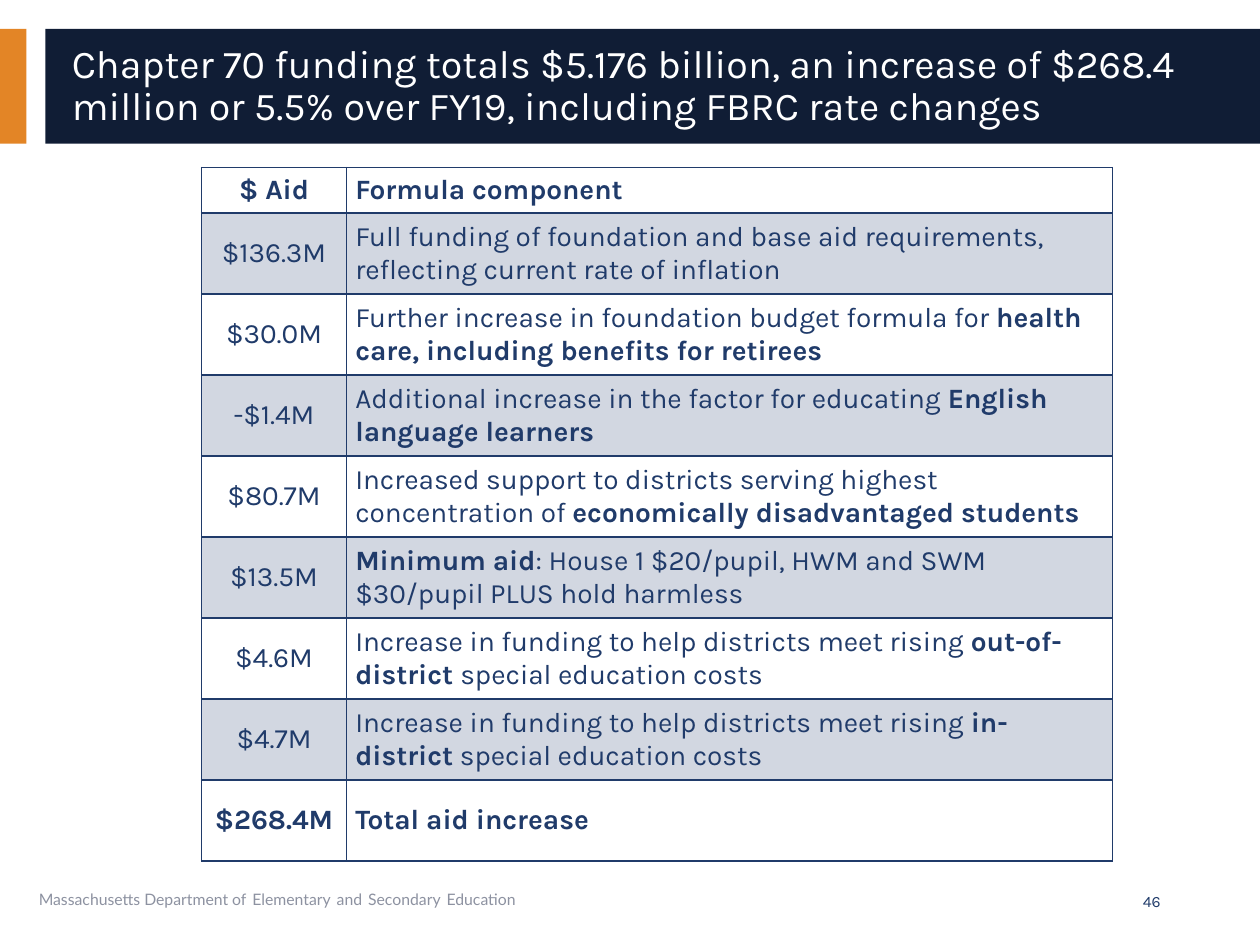
from dataclasses import dataclass

from lxml.etree import SubElement
from pptx import Presentation
from pptx.dml.color import RGBColor
from pptx.enum.shapes import MSO_SHAPE
from pptx.enum.text import MSO_ANCHOR, MSO_AUTO_SIZE, PP_ALIGN
from pptx.oxml.ns import qn
from pptx.util import Inches, Pt


@dataclass(frozen=True)
class Theme:
    """Colours, fonts and type sizes of the slide."""
    navy: str = "101D35"
    blue: str = "203B6A"
    orange: str = "E38526"
    grey: str = "8D92A1"
    white: str = "FFFFFF"
    font: str = "Karla"
    footer_font: str = "Lato"
    title_size: float = 22.5
    table_size: float = 16
    small_size: float = 9
    gap_size: float = 13.5
    band_alpha: int = 20
    border: float = 1


T = Theme()
COLS, ROWS = 100, 75
SLIDE_W, SLIDE_H = Inches(10), Inches(7.5)
BAND_TOP, BAND_ROWS = 2.3, 9.1
FOOTER = "Massachusetts Department of|Elementary|and|Secondary|Education"
AID_ROWS = [
    ("**$ Aid**", "**Formula component**"),
    ("$136.3M", "Full funding of foundation and base aid requirements, "
                "reflecting current rate of inflation"),
    ("$30.0M", "Further increase in foundation budget formula for "
               "**health care, including benefits for retirees**"),
    ("-$1.4M", "Additional increase in the factor for educating "
               "**English language learners**"),
    ("$80.7M", "Increased support to districts serving highest concentration of "
               "**economically disadvantaged students**"),
    ("$13.5M", "**Minimum aid**: House 1 $20/pupil, HWM and SWM "
               "$30/pupil PLUS hold harmless"),
    ("$4.6M", "Increase in funding to help districts meet rising "
              "**out-of-district **special education costs"),
    ("$4.7M", "Increase in funding to help districts meet rising "
              "**in-district** special education costs"),
    ("**$268.4M**", "**Total aid increase**"),
]


def across(n):
    """Return the width of n grid columns."""
    return round(SLIDE_W * n / COLS)


def down(n):
    """Return the height of n grid rows."""
    return round(SLIDE_H * n / ROWS)


def place(x, y, w, h):
    """Turn a grid box into slide lengths."""
    return across(x), down(y), across(w), down(h)


def add_run(p, text, size, color, font=T.font, bold=False):
    """Append one formatted run to a paragraph."""
    r = p.add_run()
    r.text = text
    r.font.name, r.font.size, r.font.bold = font, Pt(size), bold
    r.font.color.rgb = RGBColor.from_string(color)


def add_bar(s, x, w, color):
    """Draw one plain block of the title band."""
    sp = s.shapes.add_shape(MSO_SHAPE.RECTANGLE, *place(x, BAND_TOP, w, BAND_ROWS))
    sp.shadow.inherit = False
    sp.fill.solid()
    sp.fill.fore_color.rgb = RGBColor.from_string(color)
    sp.line.fill.background()
    return sp


def add_title(s, text):
    """Set the title on its band."""
    sp = s.shapes.title
    for color, x, w in ((T.orange, 0, 2.1), (T.navy, 3.6, 96.4)):
        sp._element.addprevious(add_bar(s, x, w, color)._element)
    sp.left, sp.top, sp.width, sp.height = place(4.7, 3.2, 93.3, 7.4)
    tf = sp.text_frame
    tf.auto_size, tf.vertical_anchor = MSO_AUTO_SIZE.NONE, MSO_ANCHOR.MIDDLE
    p = tf.paragraphs[0]
    p.alignment, p.line_spacing = PP_ALIGN.LEFT, 0.9
    add_run(p, text, T.title_size, T.white)


def add_box(s, box, anchor, align):
    """Add a wrapping text box and return its paragraph."""
    tf = s.shapes.add_textbox(*place(*box)).text_frame
    tf.word_wrap, tf.vertical_anchor = True, anchor
    p = tf.paragraphs[0]
    p.alignment = align
    return p


def add_footer(s, number):
    """Add the department name and the page number."""
    p = add_box(s, (2.1, 69.5, 63.3, 3.3), MSO_ANCHOR.TOP, PP_ALIGN.LEFT)
    for i, part in enumerate(FOOTER.split("|")):
        if i:
            add_run(p, " ", T.gap_size, T.blue, T.footer_font)
        add_run(p, part, T.small_size, T.grey, T.footer_font)
    p = add_box(s, (70.6, 69.5, 22.5, 4), MSO_ANCHOR.MIDDLE, PP_ALIGN.RIGHT)
    add_run(p, number, T.small_size, T.blue)


def set_borders(cell):
    """Rule all four sides of a cell."""
    tcPr = cell._tc.get_or_add_tcPr()
    for side in ("a:lnL", "a:lnR", "a:lnT", "a:lnB"):
        ln = SubElement(tcPr, qn(side), w=str(Pt(T.border)))
        SubElement(SubElement(ln, qn("a:solidFill")), qn("a:srgbClr"), val=T.blue)


def set_fill(cell, banded):
    """Tint a banded cell and leave the others clear."""
    if not banded:
        cell.fill.background()
        return
    cell.fill.solid()
    cell.fill.fore_color.rgb = RGBColor.from_string(T.blue)
    clr = cell._tc.tcPr.find(qn("a:solidFill")).find(qn("a:srgbClr"))
    SubElement(clr, qn("a:alpha"), val=str(T.band_alpha * 1000))


def fill_cell(cell, text, align, banded):
    """Format a cell and write its text, bold between double stars."""
    set_borders(cell)
    set_fill(cell, banded)
    cell.vertical_anchor = MSO_ANCHOR.MIDDLE
    cell.margin_left = cell.margin_right = Inches(0.07)
    cell.margin_top = cell.margin_bottom = Inches(0.04)
    p = cell.text_frame.paragraphs[0]
    p.alignment = align
    for i, part in enumerate(text.split("**")):
        if part:
            add_run(p, part, T.table_size, T.blue, bold=i % 2 == 1)


def add_aid_table(s, rows):
    """Add the table of aid by formula component."""
    widths, heights = (11.5, 60.8), [3.6] + [6.43] * (len(rows) - 1)
    box = place(16, 13.3, sum(widths), sum(heights))
    tbl = s.shapes.add_table(len(rows), len(widths), *box).table
    tbl.first_row = tbl.horz_banding = False
    for col, w in zip(tbl.columns, widths):
        col.width = across(w)
    for i, (row, h) in enumerate(zip(tbl.rows, heights)):
        row.height = down(h)
        for cell, text, align in zip(row.cells, rows[i], (PP_ALIGN.CENTER, PP_ALIGN.LEFT)):
            fill_cell(cell, text, align, i % 2 == 1)


def main():
    """Build the slide and save it."""
    prs = Presentation()
    prs.slide_width, prs.slide_height = SLIDE_W, SLIDE_H
    s = prs.slides.add_slide(prs.slide_layouts[5])
    add_title(s, "Chapter 70 funding totals $5.176 billion, an increase of $268.4 "
                 "million or 5.5% over FY19, including FBRC rate changes")
    add_footer(s, "46")
    add_aid_table(s, AID_ROWS)
    prs.save("out.pptx")


if __name__ == "__main__":
    main()
